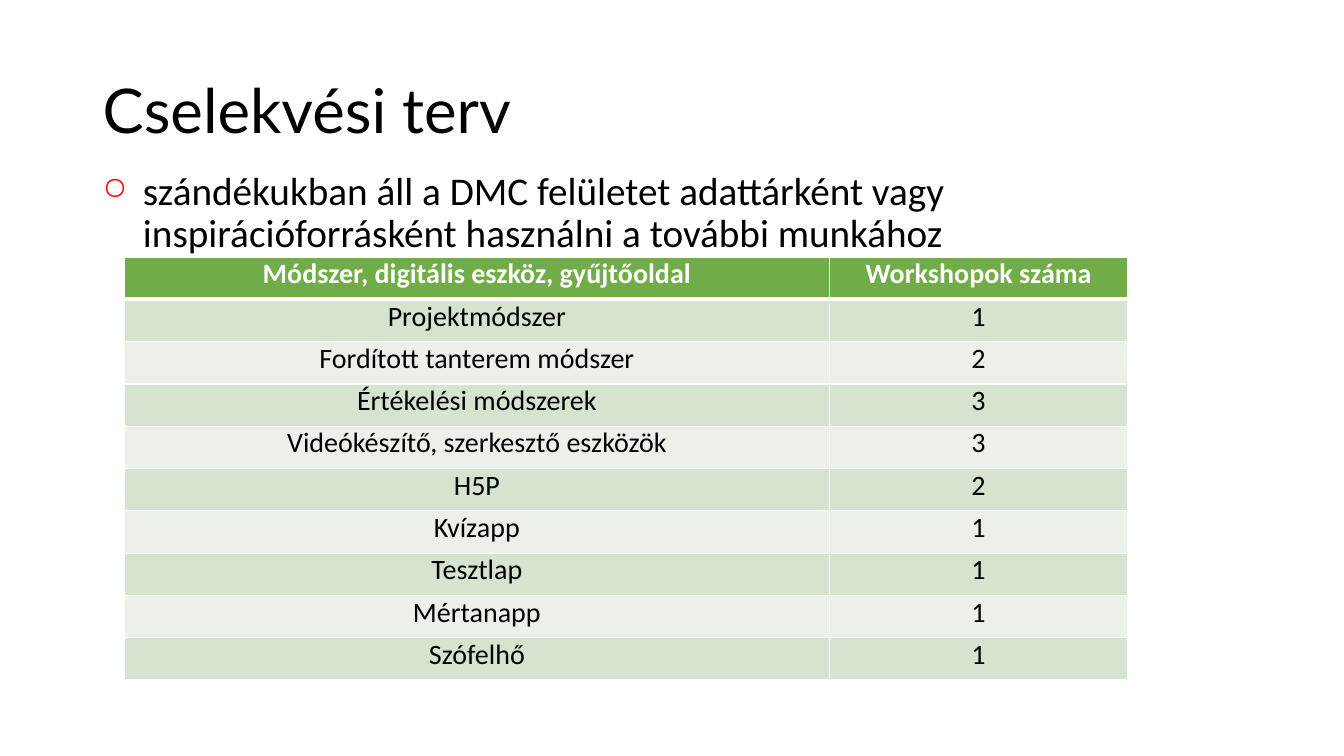
from dataclasses import dataclass

from lxml import etree
from pptx import Presentation
from pptx import util as u
from pptx.dml.color import RGBColor
from pptx.enum import text
from pptx.oxml import ns


@dataclass(frozen=True)
class Theme:
    title_font: str = "Lato"
    body_font: str = "Calibri"
    title_size: int = 44
    body_size: int = 28
    table_size: int = 20
    ink: str = "000000"
    white: str = "FFFFFF"
    bullet: str = "FF0000"
    header: str = "70AD47"
    bands: tuple = ("D5E3CF", "EBF1E9")


THEME = Theme()
TITLE = "Cselekvési terv"
INTENT = ("szándékukban áll a DMC felületet adattárként vagy "
          "inspirációforrásként használni a további munkához")
WORKSHOPS = [
    ("Módszer, digitális eszköz, gyűjtőoldal", "Workshopok száma"),
    ("Projektmódszer", "1"),
    ("Fordított tanterem módszer", "2"),
    ("Értékelési módszerek", "3"),
    ("Videókészítő, szerkesztő eszközök", "3"),
    ("H5P", "2"),
    ("Kvízapp", "1"),
    ("Tesztlap", "1"),
    ("Mértanapp", "1"),
    ("Szófelhő", "1"),
]


def apply(target, values):
    for name, value in values.items():
        setattr(target, name, value)


def add_xml(parent, tag, **attributes):
    return etree.SubElement(parent, ns.qn(tag), attributes)


def style_font(font, name, size, color, bold=False):
    apply(font, {"name": name, "size": u.Pt(size), "bold": bold})
    font.color.rgb = RGBColor.from_string(color)


def add_text(page, box, words, anchor):
    """Place a wrapping text box and return its paragraph."""
    frame = page.shapes.add_textbox(*map(u.Inches, box)).text_frame
    apply(frame, {"word_wrap": True, "vertical_anchor": anchor})
    para = frame.paragraphs[0]
    apply(para, {"text": words, "line_spacing": 0.9})
    return para


def add_title(page, box):
    para = add_text(page, box, TITLE, text.MSO_ANCHOR.MIDDLE)
    style_font(para.font, THEME.title_font, THEME.title_size, THEME.ink)


def add_intent(page, box):
    para = add_text(page, box, INTENT, text.MSO_ANCHOR.TOP)
    props = para._p.get_or_add_pPr()
    indent = u.Inches(0.4)
    props.set("marL", str(indent))
    props.set("indent", str(-indent))
    add_xml(add_xml(props, "a:buClr"), "a:srgbClr", val=THEME.bullet)
    add_xml(props, "a:buSzPct", val="80000")
    add_xml(props, "a:buChar", char="○")
    style_font(para.font, THEME.body_font, THEME.body_size, THEME.ink)


def set_borders(cell, widths):
    """Draw white borders; they must come before the fill in the XML."""
    props = cell._tc.get_or_add_tcPr()
    for position, (side, width) in enumerate(widths.items()):
        line = etree.Element(ns.qn(f"a:{side}"), w=str(u.Pt(width)))
        add_xml(add_xml(line, "a:solidFill"), "a:srgbClr", val=THEME.white)
        props.insert(position, line)


def fill_cell(cell, words, row):
    is_header = row == 0
    apply(cell, {"text": words, "vertical_anchor": text.MSO_ANCHOR.TOP,
                 "margin_left": u.Inches(0.07), "margin_right": u.Inches(0.07),
                 "margin_top": 0, "margin_bottom": 0})
    cell.fill.solid()
    color = THEME.header if is_header else THEME.bands[(row - 1) % 2]
    cell.fill.fore_color.rgb = RGBColor.from_string(color)
    set_borders(cell, {"lnL": 1, "lnR": 1, "lnT": 3 if row == 1 else 1,
                       "lnB": 3 if is_header else 1})
    para = cell.text_frame.paragraphs[0]
    para.alignment = text.PP_ALIGN.CENTER
    style_font(para.runs[0].font, THEME.body_font, THEME.table_size,
               THEME.white if is_header else THEME.ink, is_header)


def add_workshops(page, box, first_width):
    left, top, width, height = box
    table = page.shapes.add_table(len(WORKSHOPS), 2, *map(u.Inches, box)).table
    for column, size in zip(table.columns, (first_width, width - first_width)):
        column.width = u.Inches(size)
    for row, entries in enumerate(WORKSHOPS):
        table.rows[row].height = u.Inches(height / len(WORKSHOPS))
        for column, words in enumerate(entries):
            fill_cell(table.cell(row, column), words, row)


def main():
    deck = Presentation()
    apply(deck, {"slide_width": u.Inches(13.33), "slide_height": u.Inches(7.5)})
    page = deck.slides.add_slide(deck.slide_layouts[6])
    add_title(page, (0.92, 0.4, 11.5, 1.45))
    add_intent(page, (0.92, 1.65, 11.5, 5.11))
    add_workshops(page, (1.23, 2.55, 9.95, 4.2), first_width=7)
    deck.save("out.pptx")


if __name__ == "__main__":
    main()
